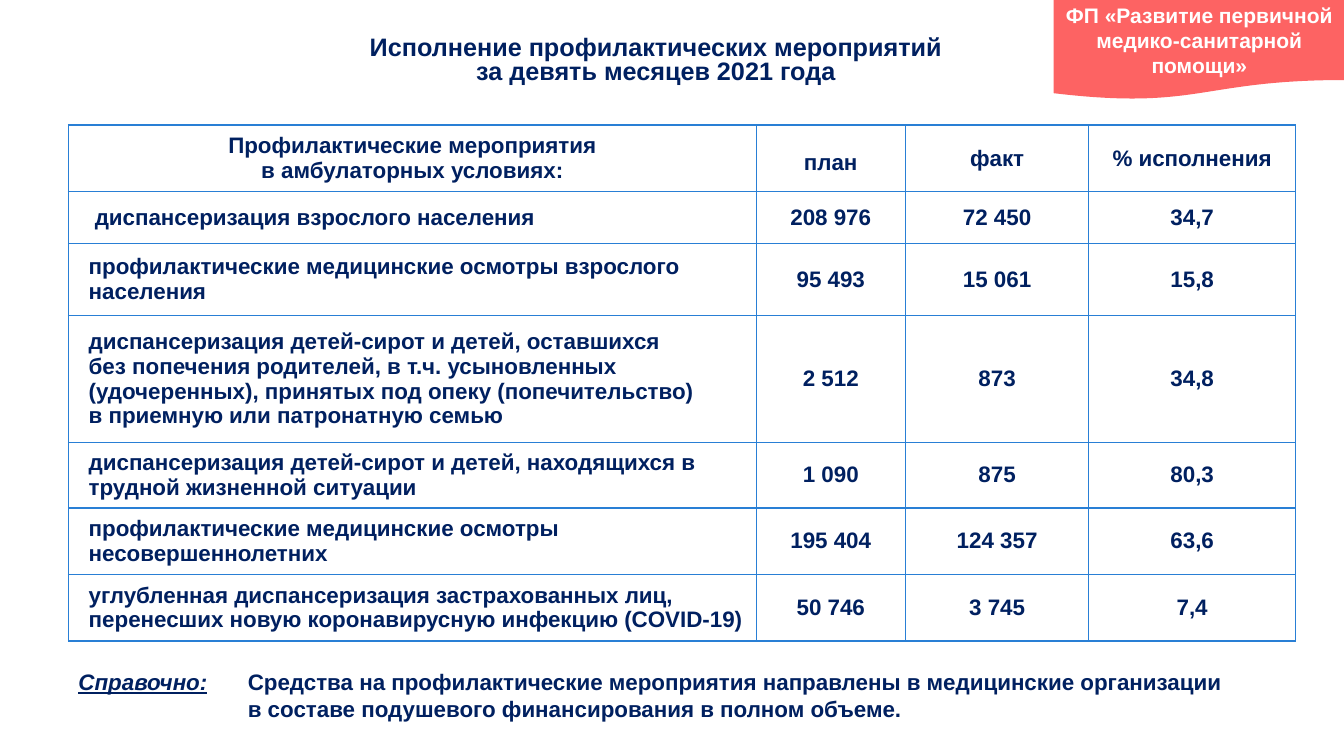
import pptx
import pptx.util
import pptx.dml.color
import pptx.enum.shapes
import pptx.enum.text
import pptx.oxml
import pptx.oxml.ns
from dataclasses import dataclass

Inches = pptx.util.Inches
PP_ALIGN = pptx.enum.text.PP_ALIGN
MIDDLE = pptx.enum.text.MSO_ANCHOR.MIDDLE


@dataclass(frozen=True)
class Theme:
    font: str = "Arial"
    text: str = "002060"
    border: str = "297FD5"
    flag: str = "FD6363"
    flag_text: str = "FFFFFF"
    title_size: int = 18
    body_size: int = 16
    flag_size: int = 15


THEME = Theme()

COLUMN_WIDTHS = (6.82, 1.48, 1.82, 2.05)
ROW_HEIGHTS = (0.66, 0.52, 0.71, 1.26, 0.65, 0.66, 0.66)
ROWS = (
    ("Профилактические мероприятия\nв амбулаторных условиях:", "план", "факт", "% исполнения"),
    ("диспансеризация взрослого населения", "208 976", "72 450", "34,7"),
    ("профилактические медицинские осмотры взрослого населения", "95 493", "15 061", "15,8"),
    ("диспансеризация детей-сирот и детей, оставшихся\n"
     "без попечения родителей, в т.ч. усыновленных (удочеренных), "
     "принятых под опеку (попечительство)\nв приемную или патронатную семью",
     "2 512", "873", "34,8"),
    ("диспансеризация детей-сирот и детей, находящихся в трудной жизненной ситуации",
     "1 090", "875", "80,3"),
    ("профилактические медицинские осмотры несовершеннолетних", "195 404", "124 357", "63,6"),
    ("углубленная диспансеризация застрахованных лиц, "
     "перенесших новую коронавирусную инфекцию (COVID-19)", "50 746", "3 745", "7,4"),
)


def rgb(value):
    return pptx.dml.color.RGBColor.from_string(value)


def write(p, text, size=THEME.body_size, color=THEME.text, align=PP_ALIGN.LEFT):
    """Fill a paragraph with bold text; a newline becomes a line break."""
    p.text = text
    p.alignment = align
    p.font.name = THEME.font
    p.font.size = pptx.util.Pt(size)
    p.font.bold = True
    p.font.color.rgb = rgb(color)


def add_title(s, text):
    title = s.shapes.title
    title.left, title.top = Inches(0.52), Inches(0.29)
    title.width, title.height = Inches(11.97), Inches(0.63)
    tf = title.text_frame
    tf.vertical_anchor = MIDDLE
    tf.auto_size = pptx.enum.text.MSO_AUTO_SIZE.NONE
    p = tf.paragraphs[0]
    write(p, text, THEME.title_size, align=PP_ALIGN.CENTER)
    p.line_spacing = 0.8


def add_flag(s, text):
    sp = s.shapes.add_shape(pptx.enum.shapes.MSO_SHAPE.FLOWCHART_DOCUMENT,
                            Inches(10.45), 0, Inches(2.89), Inches(0.99))
    sp.shadow.inherit = False
    sp.fill.solid()
    sp.fill.fore_color.rgb = rgb(THEME.flag)
    sp.line.fill.background()
    tf = sp.text_frame
    tf.word_wrap = True
    tf.vertical_anchor = MIDDLE
    write(tf.paragraphs[0], text, THEME.flag_size, THEME.flag_text, PP_ALIGN.CENTER)


def add_borders(cell):
    tc_pr = cell._tc.get_or_add_tcPr()
    for i, side in enumerate(("lnL", "lnR", "lnT", "lnB")):
        tc_pr.insert(i, pptx.oxml.parse_xml(
            f'<a:{side} {pptx.oxml.ns.nsdecls("a")} w="12700"><a:solidFill>'
            f'<a:srgbClr val="{THEME.border}"/></a:solidFill></a:{side}>'))


def format_cell(cell, text, is_label):
    cell.fill.background()
    add_borders(cell)
    cell.vertical_anchor = MIDDLE
    cell.margin_top = cell.margin_bottom = 0
    cell.margin_left = Inches(0.2 if is_label else 0.08)
    cell.margin_right = Inches(0 if is_label else 0.08)
    write(cell.text_frame.paragraphs[0], text,
          align=PP_ALIGN.LEFT if is_label else PP_ALIGN.CENTER)


def add_results_table(s):
    frame = s.shapes.add_table(len(ROWS), len(COLUMN_WIDTHS), Inches(0.68), Inches(1.24),
                               Inches(sum(COLUMN_WIDTHS)), Inches(sum(ROW_HEIGHTS)))
    table = frame.table
    table.first_row = table.horz_banding = False
    for column, width in zip(table.columns, COLUMN_WIDTHS):
        column.width = Inches(width)
    for r, (height, texts) in enumerate(zip(ROW_HEIGHTS, ROWS)):
        table.rows[r].height = Inches(height)
        for c, text in enumerate(texts):
            format_cell(table.cell(r, c), text, is_label=r > 0 and c == 0)
    table.cell(0, 1).margin_top = Inches(0.08)
    table.cell(1, 0).margin_left = Inches(0.26)


def add_note(s, left, width, height, *lines):
    """Add a text box at the foot of the slide and return its paragraphs."""
    tf = s.shapes.add_textbox(Inches(left), Inches(6.58), Inches(width), Inches(height)).text_frame
    tf.word_wrap = True
    tf.auto_size = pptx.enum.text.MSO_AUTO_SIZE.SHAPE_TO_FIT_TEXT
    for i, line in enumerate(lines):
        write(tf.add_paragraph() if i else tf.paragraphs[0], line)
    return tf.paragraphs


def main():
    prs = pptx.Presentation()
    prs.slide_width, prs.slide_height = Inches(13.33), Inches(7.5)
    s = prs.slides.add_slide(prs.slide_layouts.get_by_name("Title Only"))
    add_title(s, "Исполнение профилактических мероприятий\nза девять месяцев 2021 года")
    add_results_table(s)
    add_flag(s, "ФП «Развитие первичной медико-санитарной помощи»")
    label = add_note(s, 0.68, 1.78, 0.37, "Справочно:")[0]
    label.font.italic = label.font.underline = True
    add_note(s, 2.36, 10.6, 0.64,
             "Средства на профилактические мероприятия направлены в медицинские организации",
             "в составе подушевого финансирования в полном объеме.")
    prs.save("out.pptx")


if __name__ == "__main__":
    main()
